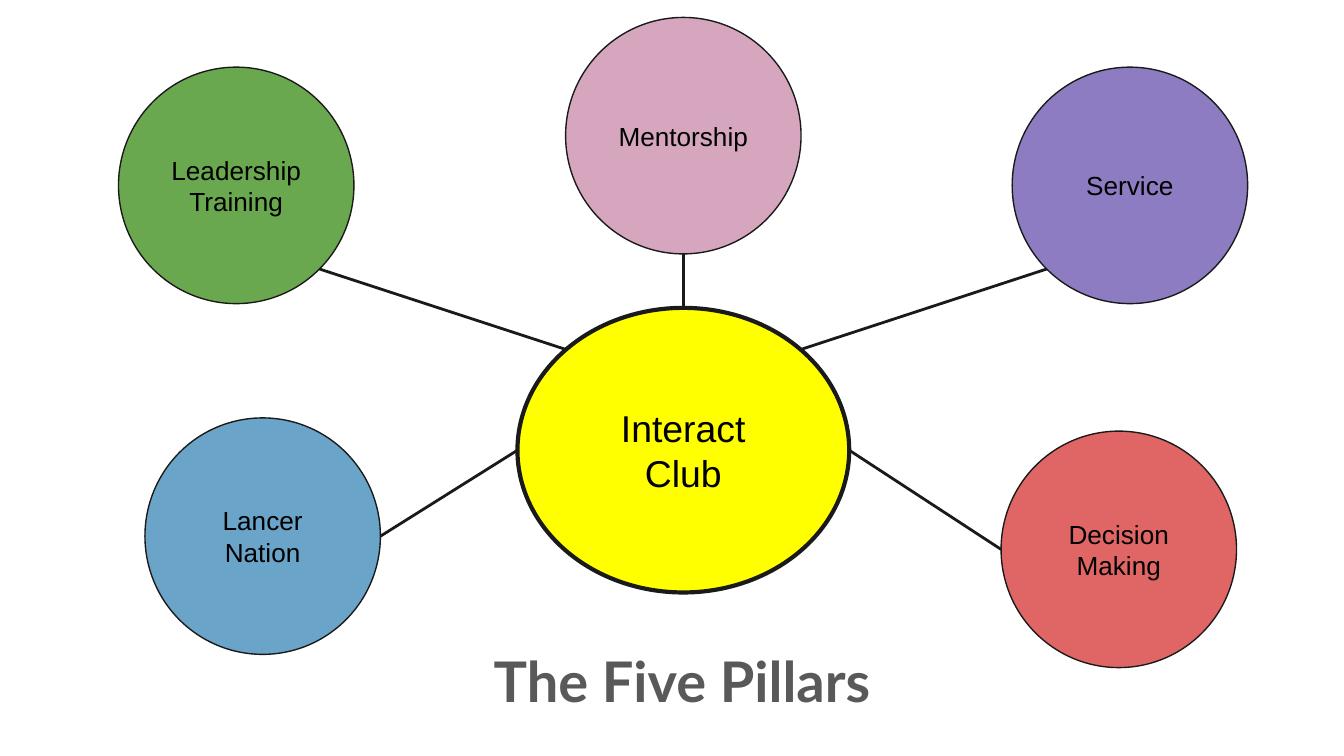
from math import cos, radians, sin

from lxml import etree
from pptx import Presentation
from pptx import util as u
from pptx.dml.color import RGBColor
from pptx.enum import shapes, text
from pptx.oxml import ns

# Content: lengths in cm, angles in degrees clockwise from the right
TITLE = "The Five Pillars"
TITLE_BOX = (9.04, 12.22, 7.7, 1.27)
HUB = ("Interact Club", (9.78, 5.82, 6.27, 5.38), "FFFF00")
PILLAR_SIZE = (4.45, 4.47)
PILLARS = [  # label, left, top, fill, angle on pillar, angle on hub
    ("Lancer Nation", 2.74, 7.9, "6AA4C8", 0, 180),
    ("Leadership Training", 2.24, 1.27, "6AA84F", 45, 225),
    ("Mentorship", 10.69, 0.33, "D5A6BD", 90, 270),
    ("Decision Making", 18.92, 8.15, "E06666", 180, 0),
    ("Service", 19.13, 1.27, "8E7CC3", 135, 315),
]
OUTLINE = "1A1A1A"


def color(value):
    return RGBColor.from_string(value)


def lengths(values):
    return [u.Cm(value) for value in values]


def write(shape, content, font_name, size, font_color, bold=False):
    frame = shape.text_frame
    frame.text = content
    frame.word_wrap = True
    frame.vertical_anchor = text.MSO_ANCHOR.MIDDLE
    frame.margin_left = frame.margin_right = u.Cm(0.25)
    frame.margin_top = frame.margin_bottom = u.Cm(0.25)
    paragraph = frame.paragraphs[0]
    paragraph.alignment = text.PP_ALIGN.CENTER
    font = paragraph.runs[0].font
    font.name, font.size, font.bold = font_name, u.Pt(size), bold
    font.color.rgb = color(font_color)


def add_ellipse(slide, label, box, fill, line_width, size):
    shape = slide.shapes.add_shape(shapes.MSO_SHAPE.OVAL, *lengths(box))
    shape.shadow.inherit = False
    shape.fill.solid()
    shape.fill.fore_color.rgb = color(fill)
    shape.line.color.rgb = color(OUTLINE)
    shape.line.width = u.Pt(line_width)
    write(shape, label, "Arial", size, "000000")


def rim_point(box, angle):
    left, top, width, height = box
    return (left + width / 2 * (1 + cos(radians(angle))),
            top + height / 2 * (1 + sin(radians(angle))))


def add_spoke(slide, start, end):
    connector = slide.shapes.add_connector(
        shapes.MSO_CONNECTOR.STRAIGHT, *lengths(start + end))
    connector.line.color.rgb = color(OUTLINE)
    connector.line.width = u.Pt(1.5)
    properties = connector._element.spPr
    etree.SubElement(properties, ns.qn("a:effectLst"))


presentation = Presentation()
presentation.slide_width, presentation.slide_height = lengths((25.4, 14.29))
slide = presentation.slides.add_slide(presentation.slide_layouts[6])

# Title below the hub
title = slide.shapes.add_textbox(*lengths(TITLE_BOX))
write(title, TITLE, "Lato", 30, "595959", bold=True)

# Hub and pillars, each pillar joined to the hub by a spoke
hub_label, hub_box, hub_fill = HUB
add_ellipse(slide, hub_label, hub_box, hub_fill, 2.25, 20)
for label, left, top, fill, pillar_angle, hub_angle in PILLARS:
    box = (left, top, *PILLAR_SIZE)
    add_ellipse(slide, label, box, fill, 0.75, 14)
    add_spoke(slide, rim_point(box, pillar_angle), rim_point(hub_box, hub_angle))

presentation.save("out.pptx")
